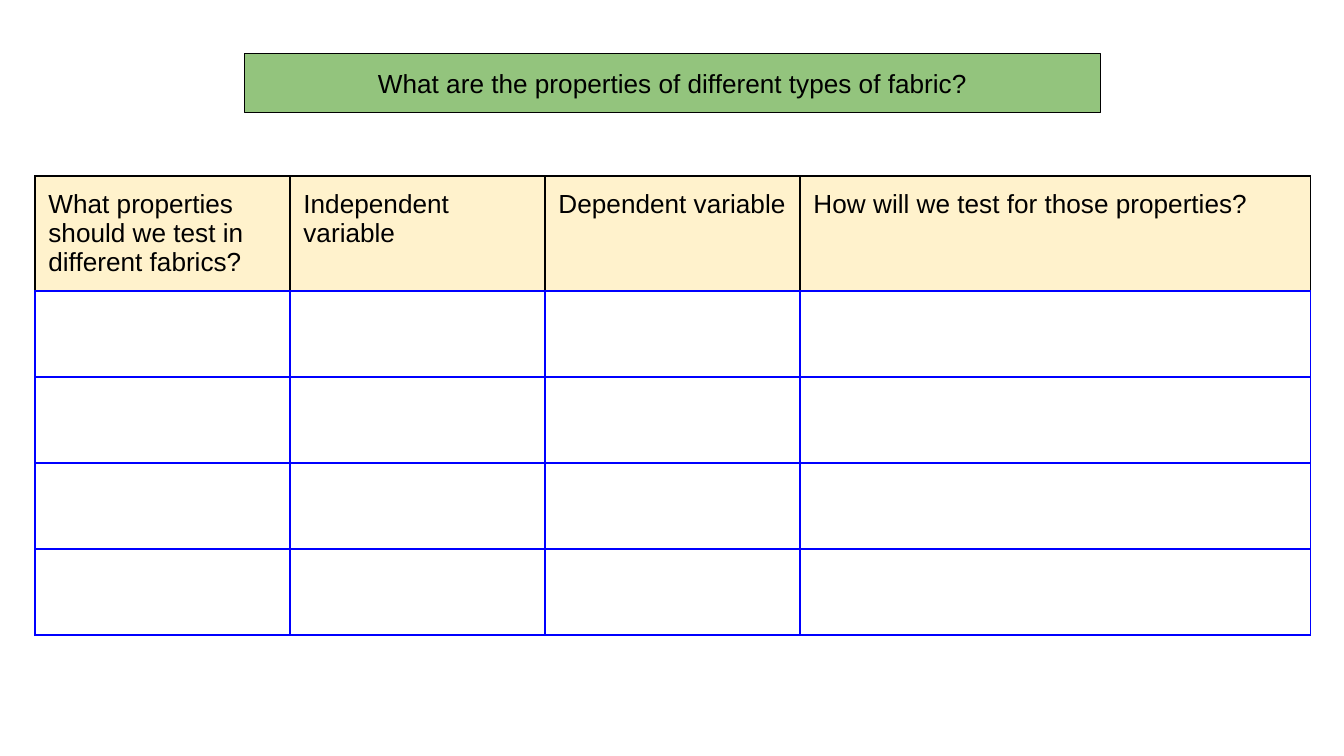
from dataclasses import dataclass

from lxml import etree
from pptx import Presentation
from pptx import util as u
from pptx.dml.color import RGBColor
from pptx.enum import shapes, text
from pptx.oxml.ns import qn


@dataclass(frozen=True)
class Theme:
    font: str = "Arial"
    size: float = 14
    ink: str = "000000"
    banner: str = "93C47D"
    heading: str = "FFF2CC"
    grid: str = "0000FF"
    line: float = 0.75
    inset: float = 0.1


@dataclass(frozen=True)
class Heading:
    wording: str
    span: int = 1


THEME = Theme()
QUESTION = "What are the properties of different types of fabric?"
HEADINGS = (
    Heading("What properties should we test in different fabrics?"),
    Heading("Independent variable"),
    Heading("Dependent variable"),
    Heading("How will we test for those properties?", span=2),
)
BLANK_ROWS = 4
HEADING_HEIGHT = 0.56
BLANK_HEIGHT = 0.64
TABLE_LEFT, TABLE_TOP, TABLE_WIDTH, TABLE_HEIGHT = 0.26, 1.31, 9.49, 3.47


def write(frame, wording: str, align) -> None:
    frame.text = wording
    frame.word_wrap = True
    paragraph = frame.paragraphs[0]
    paragraph.alignment = align
    for run in paragraph.runs:
        run.font.name = THEME.font
        run.font.size = u.Pt(THEME.size)
        run.font.color.rgb = RGBColor.from_string(THEME.ink)


def set_insets(holder) -> None:
    holder.margin_left = holder.margin_right = u.Inches(THEME.inset)
    holder.margin_top = holder.margin_bottom = u.Inches(THEME.inset)


def set_borders(cell, sides: str, bottom: str) -> None:
    properties = cell._tc.get_or_add_tcPr()
    for edge, color in (("L", sides), ("R", sides), ("T", sides), ("B", bottom)):
        border = etree.SubElement(
            properties, qn(f"a:ln{edge}"), w=str(u.Pt(THEME.line))
        )
        fill = etree.SubElement(border, qn("a:solidFill"))
        etree.SubElement(fill, qn("a:srgbClr"), val=color)


def draw_question(slide) -> None:
    banner = slide.shapes.add_shape(
        shapes.MSO_SHAPE.RECTANGLE,
        u.Inches(1.82), u.Inches(0.4), u.Inches(6.37), u.Inches(0.44),
    )
    banner.shadow.inherit = False
    banner.fill.solid()
    banner.fill.fore_color.rgb = RGBColor.from_string(THEME.banner)
    banner.line.color.rgb = RGBColor.from_string(THEME.ink)
    banner.line.width = u.Pt(THEME.line)
    set_insets(banner.text_frame)
    banner.text_frame.vertical_anchor = text.MSO_ANCHOR.TOP
    write(banner.text_frame, QUESTION, text.PP_ALIGN.CENTER)


def draw_plan(slide) -> None:
    columns = sum(heading.span for heading in HEADINGS)
    plan_frame = slide.shapes.add_table(
        BLANK_ROWS + 1, columns,
        u.Inches(TABLE_LEFT), u.Inches(TABLE_TOP),
        u.Inches(TABLE_WIDTH), u.Inches(TABLE_HEIGHT),
    )
    plan = plan_frame.table
    plan.first_row = plan.horz_banding = False

    for index, row in enumerate(plan.rows):
        is_heading = index == 0
        row.height = u.Inches(HEADING_HEIGHT if is_heading else BLANK_HEIGHT)
        for cell in row.cells:
            set_insets(cell)
            set_borders(cell, THEME.ink if is_heading else THEME.grid, THEME.grid)
            if is_heading:
                cell.fill.solid()
                cell.fill.fore_color.rgb = RGBColor.from_string(THEME.heading)
            else:
                cell.fill.background()

        column = 0
        for heading in HEADINGS:
            cell = plan.cell(index, column)
            if heading.span > 1:
                cell.merge(plan.cell(index, column + heading.span - 1))
            if is_heading:
                write(cell.text_frame, heading.wording, text.PP_ALIGN.LEFT)
            column += heading.span
    plan_frame.height = u.Inches(TABLE_HEIGHT)


def main() -> None:
    deck = Presentation()
    deck.slide_width = u.Inches(10)
    deck.slide_height = deck.slide_width * 9 // 16
    slide = deck.slides.add_slide(deck.slide_layouts[6])
    draw_question(slide)
    draw_plan(slide)
    deck.save("out.pptx")


if __name__ == "__main__":
    main()
